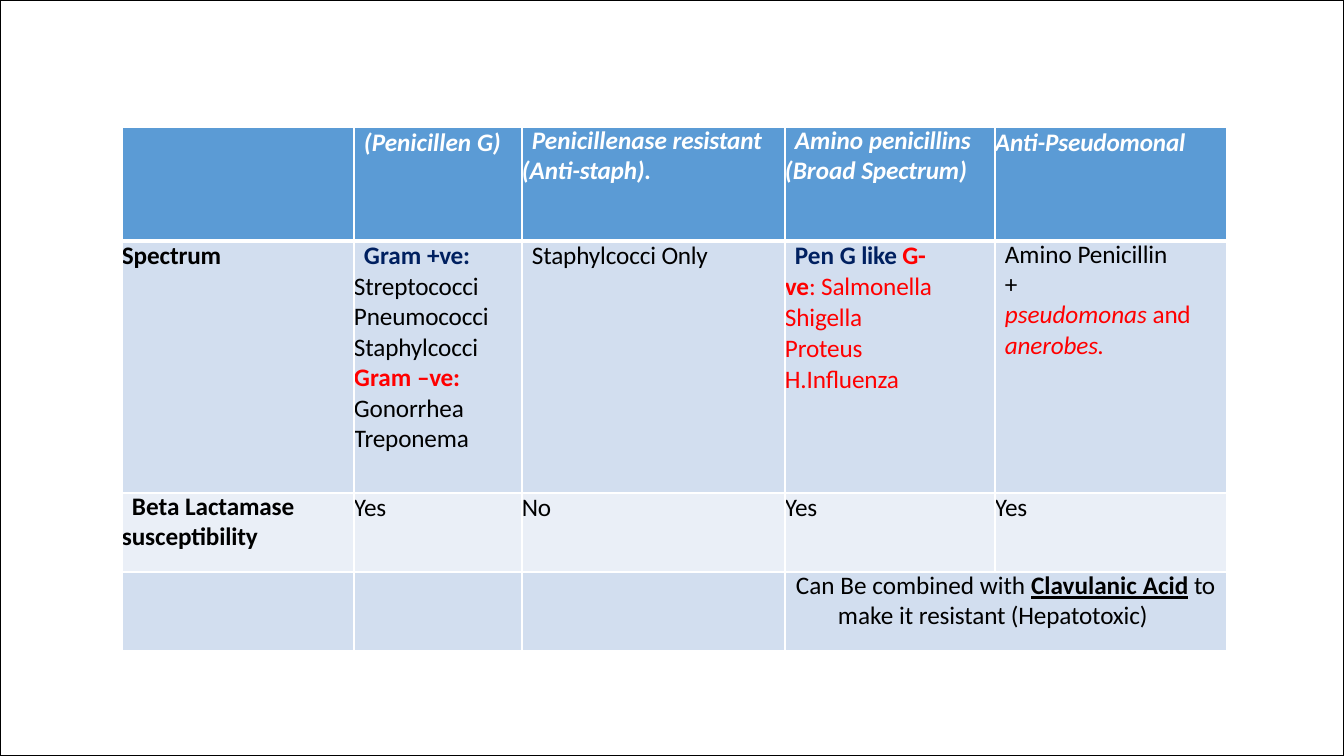
from pptx import Presentation
from pptx.dml.color import RGBColor
from pptx.enum.shapes import MSO_SHAPE as Preset
from pptx.oxml import parse_xml
from pptx.oxml.ns import nsdecls
from pptx.util import Pt

WHITE = RGBColor(0xFF, 0xFF, 0xFF)
BLACK = RGBColor(0, 0, 0)
RED = RGBColor(0xFF, 0, 0)
NAVY = RGBColor(0, 0x20, 0x60)
HEADER_BLUE = RGBColor(0x5B, 0x9B, 0xD5)
BAND_DARK = RGBColor(0xD2, 0xDE, 0xEF)
BAND_LIGHT = RGBColor(0xEA, 0xEF, 0xF7)

PAGE_WIDTH, PAGE_HEIGHT = 1344, 756
COLUMN_WIDTHS = [232, 168, 263, 210, 232]
ROW_HEIGHTS = [114, 252, 79, 79]
ROW_FILLS = [HEADER_BLUE, BAND_DARK, BAND_LIGHT, BAND_DARK]
LINE = Pt(21)

HEAD = {"color": WHITE, "bold": True, "italic": True}
BODY = {"color": BLACK}
STRONG = {"color": BLACK, "bold": True}
LINKED = {**STRONG, "underline": True}
POSITIVE = {"color": NAVY, "bold": True}
NEGATIVE = {"color": RED, "bold": True}
ALERT = {"color": RED}
SPECIES = {"color": RED, "italic": True}


def para(*spans, left=0, indent=0, before=2, spacing=None):
    return {"spans": spans, "left": left, "indent": indent,
            "format": {"space_before": Pt(before), "line_spacing": spacing}}


CELLS = {
    (0, 1): [para(("(Penicillen ", HEAD, 0), ("G)", HEAD, -20), indent=10)],
    (0, 2): [para(("Penicillenase ", HEAD, 0), ("resistant (Anti-staph).", HEAD, -10),
                  indent=10, before=3, spacing=LINE)],
    (0, 3): [para(("Amino ", HEAD, 0), ("penicillins ", HEAD, -10), ("(Broad ", HEAD, 0),
                  ("Spectrum)", HEAD, -10), indent=10, before=3, spacing=LINE)],
    (0, 4): [para(("Anti-Pseudomonal", HEAD, -10))],
    (1, 0): [para(("Spectrum", STRONG, -10))],
    (1, 1): [para(("Gram ", POSITIVE, 0), ("+ve: ", POSITIVE, -20),
                  ("Streptococci Pneumococci Staphylcocci ", BODY, -10),
                  ("Gram ", NEGATIVE, 0), ("–ve: ", NEGATIVE, -20),
                  ("Gonorrhea Treponema", BODY, -10), indent=10, spacing=0.99)],
    (1, 2): [para(("Staphylcocci ", BODY, -10), ("Only", BODY, -20), indent=10)],
    (1, 3): [para(("Pen G", POSITIVE, 0), (" like ", POSITIVE, -20),
                  ("G-ve", NEGATIVE, -20), (": ", ALERT, -20),
                  ("Salmonella Shigella Proteus H.Influenza", ALERT, -10), indent=10)],
    (1, 4): [para(("Amino ", BODY, 0), ("Penicillin", BODY, -10), indent=10, spacing=LINE),
             para(("+", BODY, -50), indent=10, before=0, spacing=LINE),
             para(("pseudomonas ", SPECIES, 0), ("and", ALERT, -20), indent=10, before=0),
             para(("anerobes.", SPECIES, -10), indent=10, before=0)],
    (2, 0): [para(("Beta ", STRONG, 0), ("Lactamase susceptibility", STRONG, -10),
                  indent=10, before=3, spacing=LINE)],
    (3, 3): [para(("Can Be combined with ", BODY, 0), ("Clavulanic", LINKED, 0),
                  (" ", LINKED, -30), ("Acid", LINKED, 0), (" ", STRONG, -30),
                  ("to ", BODY, -20), ("make it ", BODY, 0),
                  ("resistant (Hepatotoxic)", BODY, -10),
                  left=53, indent=-42, before=3, spacing=LINE)],
}
for column, answer in enumerate(["Yes", "No", "Yes", "Yes"], 1):
    CELLS[2, column] = [para((answer, BODY, -20))]

RIGHT_INSETS = {(1, 3): 60}


class Painter:
    scale = 914400 / 100.8
    font = {"name": "Calibri", "size": Pt(18), "bold": False, "italic": False}

    def __init__(self, deck):
        self.page = deck.slides.add_slide(deck.slide_layouts[6])

    @classmethod
    def px(cls, length):
        return round(length * cls.scale)

    def frame(self, *place):
        box = self.page.shapes.add_shape(Preset.RECTANGLE, *map(self.px, place))
        box.shadow.inherit = False
        box.fill.background()
        box.line.color.rgb = BLACK
        box.line.width = Pt(1)

    def table(self, left, top, widths, heights):
        place = map(self.px, (left, top, sum(widths), sum(heights)))
        table = self.page.shapes.add_table(len(heights), len(widths), *place).table
        table.first_row = table.horz_banding = False
        for column, width in zip(table.columns, widths):
            column.width = self.px(width)
        for row, height in zip(table.rows, heights):
            row.height = self.px(height)
        return table

    def cell(self, cell, fill, borders):
        cell.fill.solid()
        cell.fill.fore_color.rgb = fill
        properties = cell._tc.get_or_add_tcPr()
        for position, (side, width) in enumerate(borders.items()):
            properties.insert(position, parse_xml(
                f'<a:ln{side} {nsdecls("a")} w="{Pt(width)}"><a:solidFill>'
                f'<a:srgbClr val="{WHITE}"/></a:solidFill></a:ln{side}>'))

    def text(self, cell, paras, right):
        cell.margin_left = cell.margin_top = cell.margin_bottom = 0
        cell.margin_right = self.px(right)
        frame = cell.text_frame
        for number, content in enumerate(paras):
            paragraph = frame.add_paragraph() if number else frame.paragraphs[0]
            properties = paragraph._p.get_or_add_pPr()
            properties.set("marL", str(self.px(content["left"])))
            properties.set("indent", str(self.px(content["indent"])))
            for name, value in content["format"].items():
                setattr(paragraph, name, value)
            for span in content["spans"]:
                self.span(paragraph, *span)

    def span(self, paragraph, words, style, tracking):
        run = paragraph.add_run()
        run.text = words
        values = {**self.font, **style}
        run.font.color.rgb = values.pop("color")
        for name, value in values.items():
            setattr(run.font, name, value)
        run._r.get_or_add_rPr().set("spc", str(tracking))


def main():
    deck = Presentation()
    deck.slide_width = Painter.px(PAGE_WIDTH)
    deck.slide_height = Painter.px(PAGE_HEIGHT)
    painter = Painter(deck)
    table = painter.table(122, 127, COLUMN_WIDTHS, ROW_HEIGHTS)
    table.cell(3, 3).merge(table.cell(3, 4))
    for row, fill in enumerate(ROW_FILLS):
        borders = {"L": 1, "R": 1, "T": 3 if row == 1 else 1, "B": 3 if row == 0 else 1}
        for column in range(len(COLUMN_WIDTHS)):
            cell = table.cell(row, column)
            painter.cell(cell, fill, borders)
            if (row, column) in CELLS:
                painter.text(cell, CELLS[row, column], RIGHT_INSETS.get((row, column), 0))
    painter.frame(0, 0, PAGE_WIDTH, PAGE_HEIGHT)
    deck.save("out.pptx")


if __name__ == "__main__":
    main()
